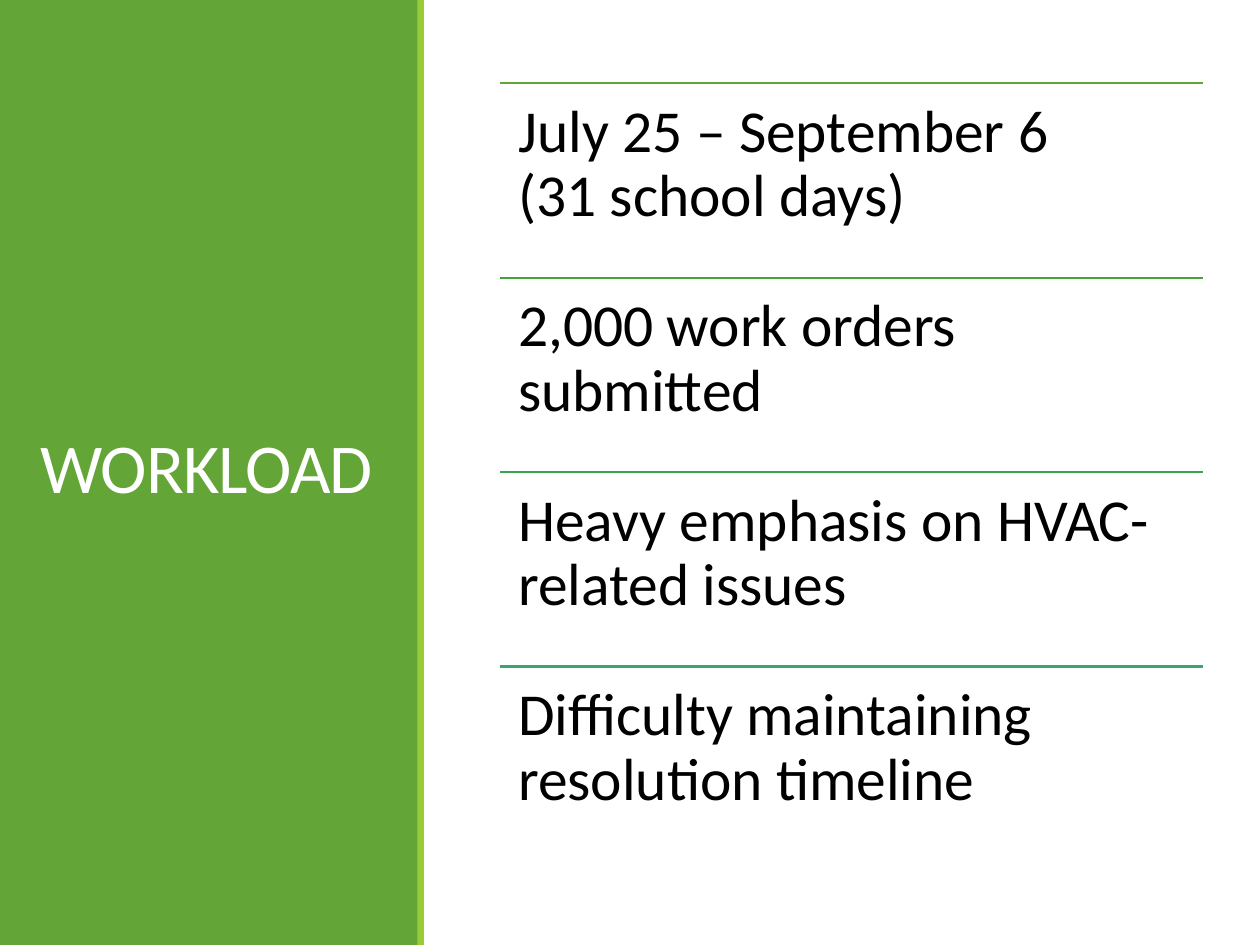
from lxml import etree
from pptx import Presentation
from pptx import util as u
from pptx.dml.color import RGBColor
from pptx.enum import shapes, text
from pptx.oxml.ns import qn

Pt = u.Pt
WHITE = RGBColor(0xFF, 0xFF, 0xFF)
BLACK = RGBColor(0, 0, 0)
GREEN = RGBColor(0x63, 0xA5, 0x37)
LIME = RGBColor(0x99, 0xCB, 0x38)

ITEMS = [
    ("July 25 – September 6\v(31 school days)", GREEN),
    ("2,000 work orders submitted", RGBColor(0x42, 0xA6, 0x37)),
    ("Heavy emphasis on HVAC-related issues", RGBColor(0x37, 0xA6, 0x4D)),
    ("Difficulty maintaining resolution timeline", RGBColor(0x37, 0xA7, 0x6F)),
]
HEIGHT = 540
LIST_LEFT, LIST_TOP, LIST_WIDTH, ROW = 286, 47.6, 401.6, 111.1


class Deck:
    font = "Calibri"
    rule_width = 1.25

    def __init__(self, prs):
        self.s = prs.slides.add_slide(prs.slide_layouts[6])

    def bar(self, x, y, w, h, color):
        sp = self.s.shapes.add_shape(
            shapes.MSO_SHAPE.RECTANGLE, Pt(x), Pt(y), Pt(w), Pt(h))
        sp.shadow.inherit = False
        sp.fill.solid()
        sp.fill.fore_color.rgb = color
        sp.line.fill.background()

    def rule(self, x, y, w, color):
        line = self.s.shapes.add_connector(
            shapes.MSO_CONNECTOR.STRAIGHT, Pt(x), Pt(y), Pt(x + w), Pt(y))
        line.line.color.rgb = color
        line.line.width = Pt(self.rule_width)
        etree.SubElement(line._element.spPr, qn("a:effectLst"))

    def text(self, x, y, w, h, words, size, color, inset, spacing,
             anchor=text.MSO_ANCHOR.TOP, tracking=0):
        """Add wrapped text; tracking is letter spacing in points."""
        tf = self.s.shapes.add_textbox(Pt(x), Pt(y), Pt(w), Pt(h)).text_frame
        tf.word_wrap = True
        tf.vertical_anchor = anchor
        tf.margin_left = tf.margin_right = Pt(inset)
        tf.margin_top = tf.margin_bottom = Pt(inset)
        p = tf.paragraphs[0]
        p.text = words
        p.line_spacing = spacing
        p.font.name = self.font
        p.font.size = Pt(size)
        p.font.color.rgb = color
        if tracking:
            p._p.pPr.find(qn("a:defRPr")).set("spc", str(round(tracking * 100)))


def main():
    prs = Presentation()
    prs.slide_width, prs.slide_height = Pt(720), Pt(HEIGHT)
    deck = Deck(prs)

    deck.bar(0, 0, 239, HEIGHT, GREEN)
    deck.text(15.8, 238.3, 207.4, 63.4, "WORKLOAD", 40, WHITE, 7.2, 0.85,
              text.MSO_ANCHOR.MIDDLE, -0.5)
    deck.bar(238.5, 0, 3.8, HEIGHT, LIME)

    for i, (words, color) in enumerate(ITEMS):
        y = LIST_TOP + i * ROW
        deck.rule(LIST_LEFT, y, LIST_WIDTH, color)
        deck.text(LIST_LEFT, y, LIST_WIDTH, ROW, words, 34, BLACK, 10.2, 0.9)

    prs.save("out.pptx")


if __name__ == "__main__":
    main()
